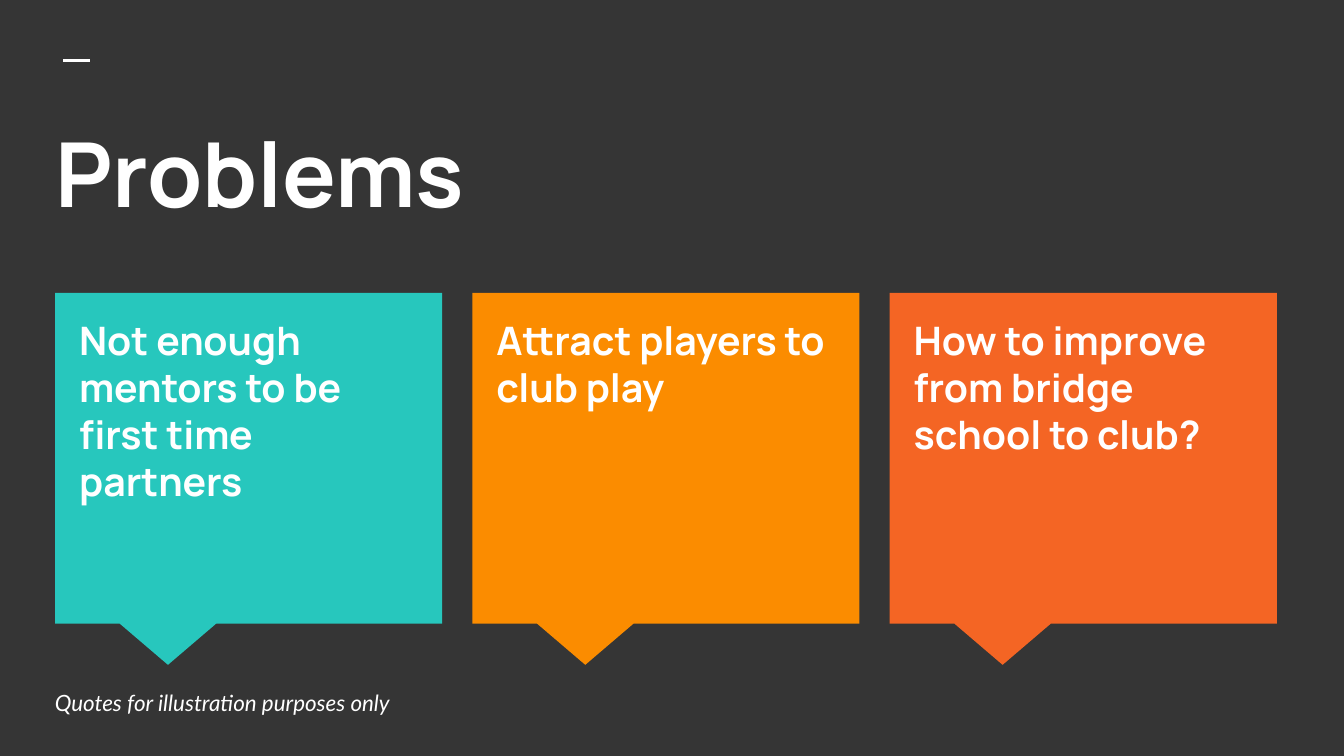
from dataclasses import dataclass

from lxml import etree
from pptx import Presentation
from pptx.dml.color import RGBColor
from pptx.enum.shapes import MSO_CONNECTOR, MSO_SHAPE
from pptx.enum.text import MSO_ANCHOR, MSO_AUTO_SIZE, PP_ALIGN
from pptx.oxml.ns import qn
from pptx.util import Inches, Pt

STRAIGHT = MSO_CONNECTOR.STRAIGHT
CALLOUT = MSO_SHAPE.RECTANGULAR_CALLOUT
TOP, MIDDLE = MSO_ANCHOR.TOP, MSO_ANCHOR.MIDDLE
NO_AUTOFIT = MSO_AUTO_SIZE.NONE
LEFT = PP_ALIGN.LEFT

COLORS = {
    "background": "353535",
    "white": "FFFFFF",
    "teal": "27C7BD",
    "amber": "FB8C00",
    "orange": "F46524",
}
HEADING_FONT, NOTE_FONT = "Manrope", "Lato"

SLIDE_W = 10
SLIDE_H = SLIDE_W * 9 / 16
CARD_LEFT, CARD_TOP = 0.41, 2.18
LAST_CARD_LEFT = 6.62
CARD_W, CARD_H = 2.88, 2.46
POINTER = (-5 / 24, 5 / 8)
TEXT_DX, TEXT_DY = 0.08, 0.07
TEXT_W, TEXT_H = 2.71, 2.19


@dataclass
class Card:
    text: str
    color: str


CARDS = [
    Card("Not enough mentors to be first time partners", "teal"),
    Card("Attract players to club play", "amber"),
    Card("How to improve from bridge school to club?", "orange"),
]
CARD_PITCH = (LAST_CARD_LEFT - CARD_LEFT) / (len(CARDS) - 1)


def rgb(name: str) -> RGBColor:
    return RGBColor.from_string(COLORS[name])


def set_text(sp, text: str, size: float, font: str = HEADING_FONT,
             bold: bool = True, italic: bool = False, anchor=TOP,
             space_after: float = 0) -> None:
    tf = sp.text_frame
    tf.text = text
    tf.word_wrap = True
    tf.auto_size = NO_AUTOFIT
    tf.vertical_anchor = anchor
    tf.margin_left = tf.margin_right = Inches(0.1)
    tf.margin_top = tf.margin_bottom = Inches(0.1)
    p = tf.paragraphs[0]
    p.alignment = LEFT
    p.space_before, p.space_after = Pt(0), Pt(space_after)
    p.font.name, p.font.size = font, Pt(size)
    p.font.bold, p.font.italic = bold, italic
    p.font.color.rgb = rgb("white")


def add_accent_line(s) -> None:
    line = s.shapes.add_connector(STRAIGHT, Inches(0.47), Inches(0.45),
                                  Inches(0.67), Inches(0.45))
    line.line.color.rgb = rgb("white")
    line.line.width = Pt(1.5)
    etree.SubElement(line._element.spPr, qn("a:effectLst"))


def add_title(s, text: str) -> None:
    title = s.shapes.title
    title.left, title.top = Inches(0.31), Inches(0.78)
    title.width, title.height = Inches(9.43), Inches(1.12)
    set_text(title, text, 48)


def add_card(s, card: Card, left: float) -> None:
    sp = s.shapes.add_shape(CALLOUT, Inches(left), Inches(CARD_TOP),
                            Inches(CARD_W), Inches(CARD_H))
    sp.shadow.inherit = False
    sp.adjustments[0], sp.adjustments[1] = POINTER
    sp.fill.solid()
    sp.fill.fore_color.rgb = rgb(card.color)
    sp.line.fill.background()
    box = s.shapes.add_textbox(Inches(left + TEXT_DX), Inches(CARD_TOP + TEXT_DY),
                               Inches(TEXT_W), Inches(TEXT_H))
    set_text(box, card.text, 21, space_after=12)


def add_note(s, text: str) -> None:
    box = s.shapes.add_textbox(Inches(0.31), Inches(5.09), Inches(6.83), Inches(0.28))
    set_text(box, text, 12, font=NOTE_FONT, bold=False, italic=True, anchor=MIDDLE)


def main() -> None:
    prs = Presentation()
    prs.slide_width, prs.slide_height = Inches(SLIDE_W), Inches(SLIDE_H)
    s = prs.slides.add_slide(prs.slide_layouts[5])
    s.background.fill.solid()
    s.background.fill.fore_color.rgb = rgb("background")
    add_accent_line(s)
    add_title(s, "Problems")
    for i, card in enumerate(CARDS):
        add_card(s, card, CARD_LEFT + i * CARD_PITCH)
    add_note(s, "Quotes for illustration purposes only")
    prs.save("out.pptx")


if __name__ == "__main__":
    main()
